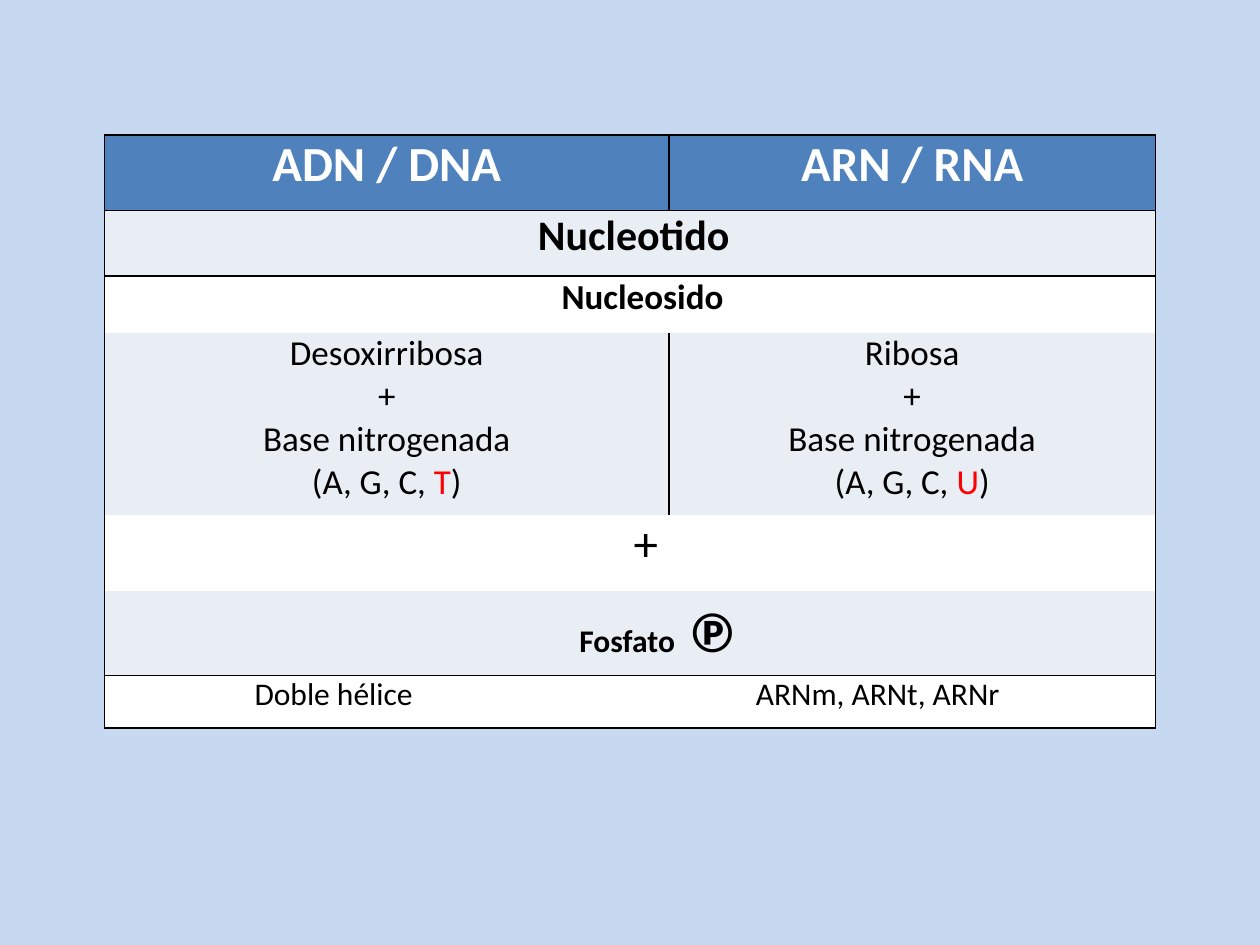
from lxml import etree
from pptx import Presentation
from pptx import util as u
from pptx.dml.color import RGBColor
from pptx.enum import text
from pptx.oxml import ns

SKY = RGBColor(0xC6, 0xD9, 0xF1)
BLUE = RGBColor(0x4F, 0x81, 0xBD)
PALE = RGBColor(0xE9, 0xED, 0xF4)
WHITE = RGBColor(0xFF, 0xFF, 0xFF)
BLACK = RGBColor(0, 0, 0)
RED = RGBColor(0xFF, 0, 0)

COLUMNS = [4.17, 0.31, 3.86]
ROWS = [0.6, 0.52, 0.45, 1.45, 0.6, 0.67, 0.42]
RULES_ABOVE = {0, 1, 2, 6, 7}  # row boundaries that carry a line
DIVIDED_ROWS = {0, 3}  # rows with a line between DNA and RNA

HEADER = dict(size=28, bold=True, color=WHITE)
BODY = dict(size=20, bold=False, color=BLACK)
FORM = dict(size=18, bold=False, color=BLACK)


def sugar_and_base(sugar, base):
    return [[(line, BODY)] for line in (sugar, "+", "Base nitrogenada")] + [
        [("(A, G, C, ", BODY), (base, BODY | {"color": RED}), (")", BODY)]]


# row, first column, columns spanned, fill, left indent, paragraphs of (words, format)
ENTRIES = [
    (0, 0, 2, BLUE, 0, [[("ADN / DNA", HEADER)]]),
    (0, 2, 1, BLUE, 0, [[("ARN / RNA", HEADER)]]),
    (1, 0, 3, PALE, 0.06, [[("Nucleotido", dict(size=24, bold=True, color=BLACK))]]),
    (2, 0, 3, WHITE, 0.2, [[("Nucleosido", BODY | {"bold": True})]]),
    (3, 0, 2, PALE, 0, sugar_and_base("Desoxirribosa", "T")),
    (3, 2, 1, PALE, 0, sugar_and_base("Ribosa", "U")),
    (4, 0, 3, WHITE, 0.25, [[("+", BODY | {"size": 28})]]),
    (5, 0, 3, PALE, 0.44, [[("Fosfato  ", FORM | {"bold": True}),
                            ("℗", FORM | {"bold": True, "size": 32})]]),
    (6, 0, 1, WHITE, 1.19, [[("Doble hélice", FORM)]]),
    (6, 1, 2, WHITE, 1, [[("ARNm, ARNt, ARNr", FORM)]]),
]


def set_borders(cell, edges):
    """Draw a black 1 pt line on each edge marked true, none on the others."""
    properties = cell._tc.get_or_add_tcPr()
    for position, (edge, drawn) in enumerate(edges.items()):
        line = etree.Element(ns.qn(f"a:{edge}"), w=str(u.Pt(1)))
        if drawn:
            fill = etree.SubElement(line, ns.qn("a:solidFill"))
            etree.SubElement(fill, ns.qn("a:srgbClr"), val=str(BLACK))
        else:
            etree.SubElement(line, ns.qn("a:noFill"))
        properties.insert(position, line)


deck = Presentation()
deck.slide_width, deck.slide_height = u.Inches(10), u.Inches(7.5)
slide = deck.slides.add_slide(deck.slide_layouts[6])
slide.background.fill.solid()
slide.background.fill.fore_color.rgb = SKY

comparison = slide.shapes.add_table(
    len(ROWS), len(COLUMNS), u.Inches(0.83), u.Inches(1.07),
    u.Inches(sum(COLUMNS)), u.Inches(sum(ROWS))).table
comparison.first_row = comparison.horz_banding = False
for column, width in zip(comparison.columns, COLUMNS):
    column.width = u.Inches(width)
for row, height in zip(comparison.rows, ROWS):
    row.height = u.Inches(height)

for row, first, span, fill, indent, paragraphs in ENTRIES:
    end = first + span
    divided = row in DIVIDED_ROWS
    edges = {"lnL": first == 0 or divided, "lnR": end == len(COLUMNS) or divided,
             "lnT": row in RULES_ABOVE, "lnB": row + 1 in RULES_ABOVE}
    for column in range(first, end):
        part = comparison.cell(row, column)
        part.fill.solid()
        part.fill.fore_color.rgb = fill
        set_borders(part, edges)

    cell = comparison.cell(row, first)
    if span > 1:
        cell.merge(comparison.cell(row, end - 1))
    phosphate = row == 5
    side = u.Inches(0.05 if phosphate else 0)
    layout = dict(margin_left=side, margin_right=side, margin_top=0, margin_bottom=0,
                  vertical_anchor=text.MSO_ANCHOR.MIDDLE if phosphate else text.MSO_ANCHOR.TOP)
    for name, value in layout.items():
        setattr(cell, name, value)

    frame = cell.text_frame
    for number, pieces in enumerate(paragraphs):
        paragraph = frame.add_paragraph() if number else frame.paragraphs[0]
        paragraph.alignment = text.PP_ALIGN.LEFT if row == 6 else text.PP_ALIGN.CENTER
        paragraph._p.get_or_add_pPr().set("marL", str(u.Inches(indent)))
        for words, style in pieces:
            run = paragraph.add_run()
            run.text = words
            run.font.color.rgb = style["color"]
            for name, value in dict(name="Calibri", size=u.Pt(style["size"]),
                                    bold=style["bold"]).items():
                setattr(run.font, name, value)

deck.save("out.pptx")
